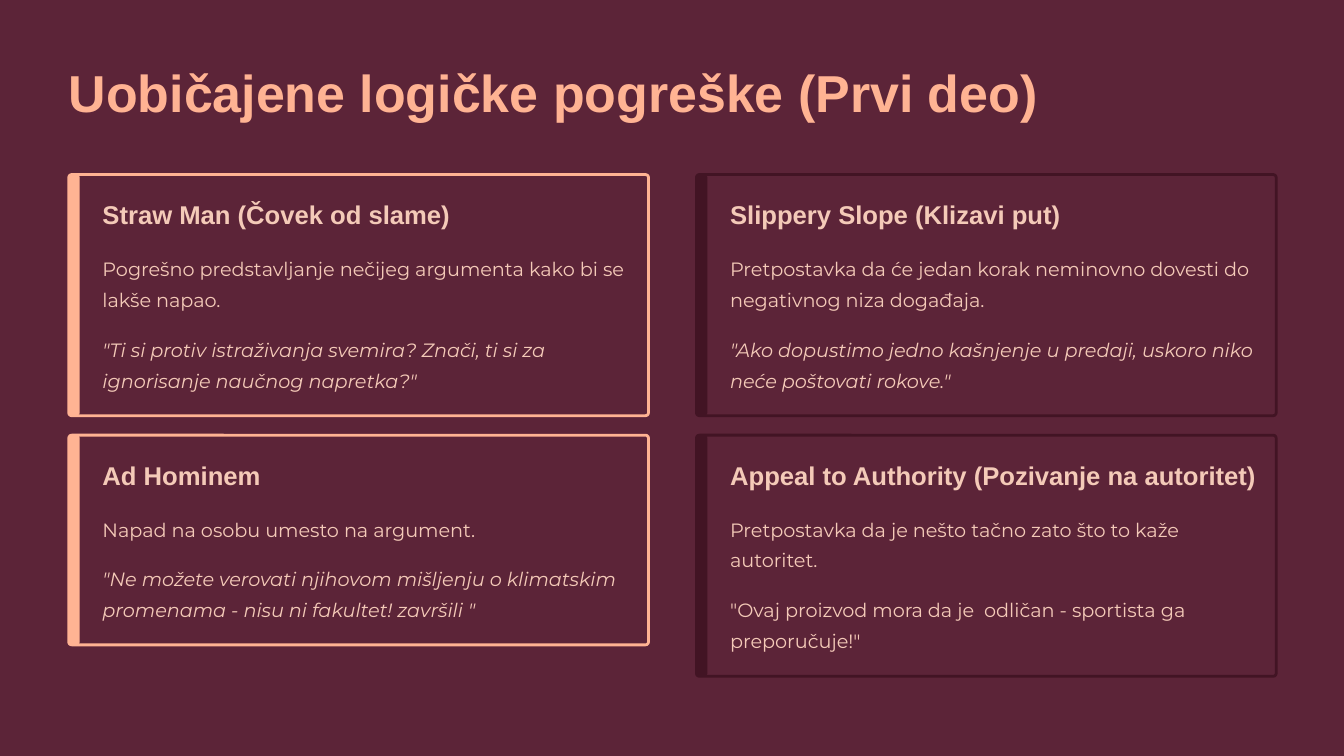
from dataclasses import dataclass

from pptx import Presentation
from pptx.dml.color import RGBColor
from pptx.enum.shapes import MSO_SHAPE
from pptx.enum.text import MSO_ANCHOR, MSO_AUTO_SIZE, PP_ALIGN
from pptx.util import Cm, Pt

ROUNDED = MSO_SHAPE.ROUNDED_RECTANGLE
TOP = MSO_ANCHOR.TOP
NO_FIT = MSO_AUTO_SIZE.NONE
LEFT = PP_ALIGN.LEFT

TITLE = "Uobičajene logičke pogreške (Prvi deo)"
COLUMNS = [
    ("peach", [
        ("Straw Man (Čovek od slame)",
         "Pogrešno predstavljanje nečijeg argumenta kako bi se lakše napao.", 2,
         '"Ti si protiv istraživanja svemira? Znači, ti si za ignorisanje naučnog napretka?"', True),
        ("Ad Hominem",
         "Napad na osobu umesto na argument.", 1,
         '"Ne možete verovati njihovom mišljenju o klimatskim promenama - nisu ni fakultet! završili "', True),
    ]),
    ("plum", [
        ("Slippery Slope (Klizavi put)",
         "Pretpostavka da će jedan korak neminovno dovesti do negativnog niza događaja.", 2,
         '"Ako dopustimo jedno kašnjenje u predaji, uskoro niko neće poštovati rokove."', True),
        ("Appeal to Authority (Pozivanje na autoritet)",
         "Pretpostavka da je nešto tačno zato što to kaže autoritet.", 2,
         '"Ovaj proizvod mora da je  odličan - sportista ga preporučuje!"', False),
    ]),
]


@dataclass(frozen=True)
class TextStyle:
    font: str
    size: float
    spacing: float
    color: RGBColor
    bold: bool = False


@dataclass(frozen=True)
class Theme:
    background = RGBColor(0x5C, 0x24, 0x38)
    accents = {"peach": RGBColor(0xFF, 0xB3, 0x93), "plum": RGBColor(0x42, 0x14, 0x24)}
    title = TextStyle("Arial", 44.5, 56, RGBColor(0xFF, 0xB3, 0x93), True)
    heading = TextStyle("Arial", 22, 28, RGBColor(0xF4, 0xCA, 0xB8), True)
    body = TextStyle("Montserrat", 16.5, 26.5, RGBColor(0xF4, 0xCA, 0xB8))
    border = 2.4


THEME = Theme()
MARGIN, CARDS_TOP = 2.08, 5.28
CARD_WIDTH, COLUMN_STEP, ROW_STEP = 17.53, 18.98, 7.88
BAR_WIDTH, CORNER = 0.33, 0.087
INDENT, PADDING = 1.02, 0.69
BODY_OFFSET, LINE_HEIGHT, QUOTE_GAP = 2.26, 0.95, 0.54
HEADING_WIDTH, BODY_WIDTH = 16.2, 15.82


def place(shape, left, top, width, height):
    shape.left, shape.top = Cm(left), Cm(top)
    shape.width, shape.height = Cm(width), Cm(height)


def write(shape, text, style, italic=False):
    frame = shape.text_frame
    frame.auto_size = NO_FIT
    frame.word_wrap = True
    frame.vertical_anchor = TOP
    frame.margin_left = frame.margin_right = frame.margin_top = frame.margin_bottom = 0
    frame.text = text
    paragraph = frame.paragraphs[0]
    paragraph.alignment = LEFT
    paragraph.line_spacing = Pt(style.spacing)
    paragraph.space_before = Pt(0)
    font = paragraph.runs[0].font
    font.name, font.size = style.font, Pt(style.size)
    font.bold, font.italic = style.bold, italic
    font.color.rgb = style.color


def add_text(slide, box, text, style, italic=False):
    write(slide.shapes.add_textbox(*map(Cm, box)), text, style, italic)


def add_panel(slide, box, fill, line=None):
    shape = slide.shapes.add_shape(ROUNDED, *map(Cm, box))
    shape.shadow.inherit = False
    shape.adjustments[0] = CORNER / min(box[2:])
    shape.fill.solid()
    shape.fill.fore_color.rgb = fill
    if line is None:
        shape.line.fill.background()
    else:
        shape.line.color.rgb = line
        shape.line.width = Pt(THEME.border)


def add_card(slide, left, top, accent, card):
    heading, definition, line_count, quote, italic = card
    definition_height = line_count * LINE_HEIGHT
    quote_height = 2 * LINE_HEIGHT
    quote_offset = BODY_OFFSET + definition_height + QUOTE_GAP
    height = quote_offset + quote_height + PADDING
    text_left = left + INDENT
    add_panel(slide, (left, top, CARD_WIDTH, height), THEME.background, accent)
    add_panel(slide, (left, top, BAR_WIDTH, height), accent)
    add_text(slide, (text_left, top + PADDING, HEADING_WIDTH, 1), heading, THEME.heading)
    add_text(slide, (text_left, top + BODY_OFFSET, BODY_WIDTH, definition_height),
             definition, THEME.body)
    add_text(slide, (text_left, top + quote_offset, BODY_WIDTH, quote_height),
             quote, THEME.body, italic)


def main():
    presentation = Presentation()
    presentation.slide_width, presentation.slide_height = Cm(40.64), Cm(22.86)
    slide = presentation.slides.add_slide(presentation.slide_layouts[5])
    slide.background.fill.solid()
    slide.background.fill.fore_color.rgb = THEME.background
    title = slide.shapes.title
    place(title, MARGIN, 1.75, 36.5, 1.98)
    write(title, TITLE, THEME.title)
    for column, (accent, cards) in enumerate(COLUMNS):
        for row, card in enumerate(cards):
            add_card(slide, MARGIN + column * COLUMN_STEP, CARDS_TOP + row * ROW_STEP,
                     THEME.accents[accent], card)
    presentation.save("out.pptx")


if __name__ == "__main__":
    main()
